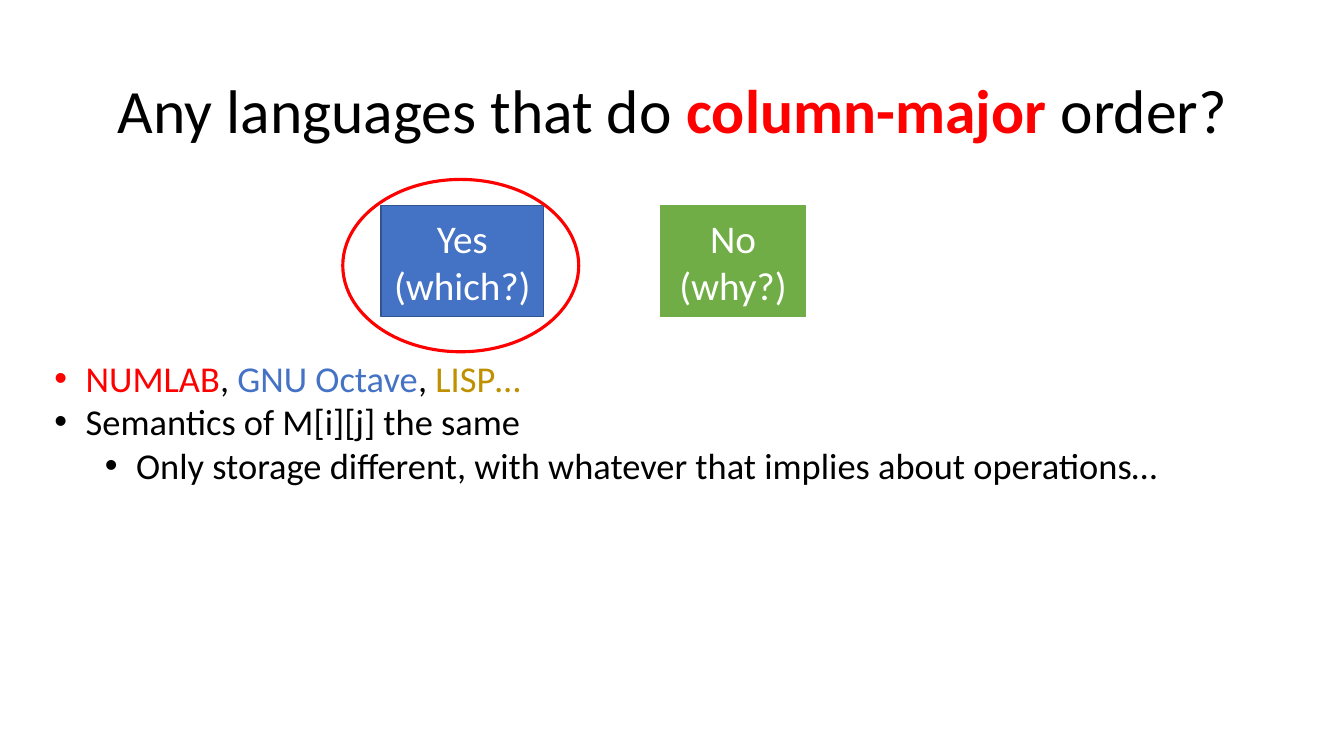
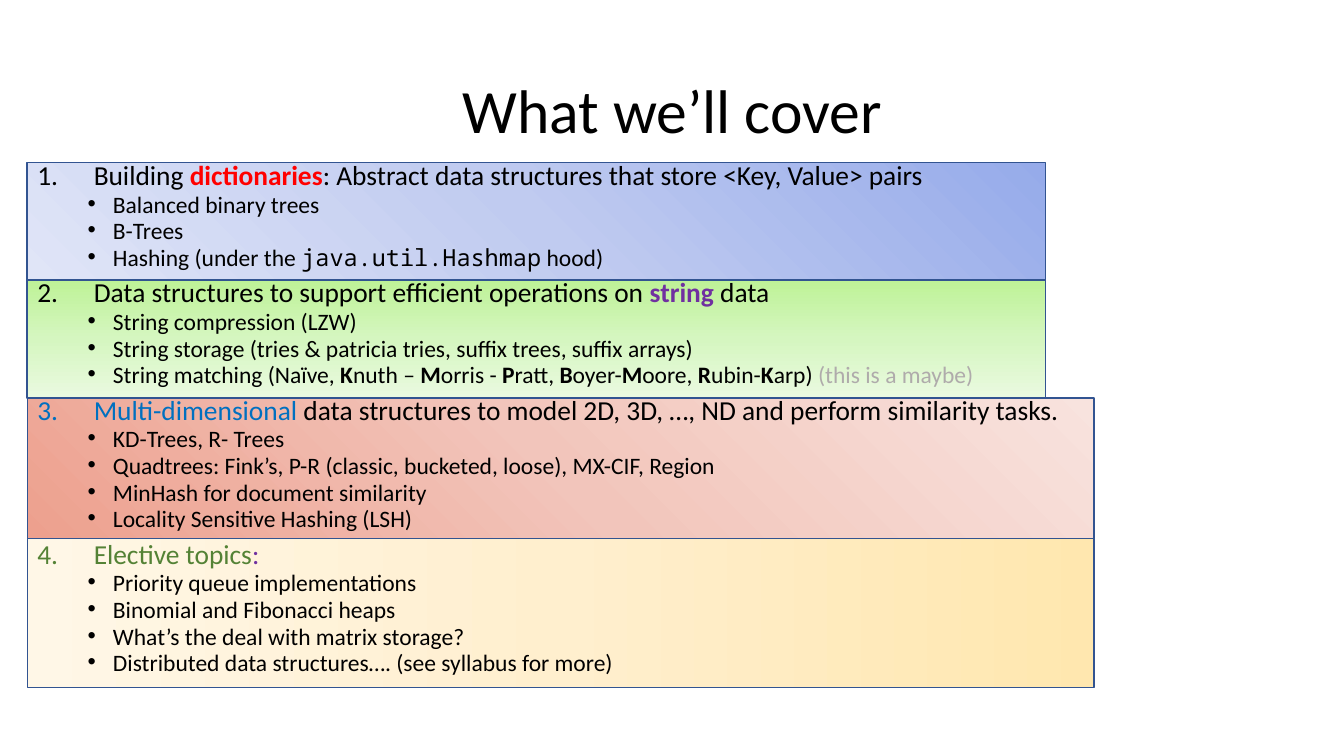
from copy import deepcopy

from lxml import etree
from pptx import Presentation
from pptx.dml.color import RGBColor
from pptx.enum.shapes import MSO_SHAPE
from pptx.enum.text import MSO_ANCHOR, MSO_AUTO_SIZE, PP_ALIGN
from pptx.oxml.ns import qn
from pptx.util import Inches, Pt

RECTANGLE, OVAL = MSO_SHAPE.RECTANGLE, MSO_SHAPE.OVAL
MIDDLE, TOP = MSO_ANCHOR.MIDDLE, MSO_ANCHOR.TOP
CENTER, LEFT = PP_ALIGN.CENTER, PP_ALIGN.LEFT
NO_AUTOFIT = MSO_AUTO_SIZE.NONE
TITLE_ONLY, TITLE_AND_CONTENT = 5, 1

COLORS = {
    "black": "000000", "white": "FFFFFF", "red": "FF0000", "blue": "4472C4",
    "outline": "325491", "green": "70AD47", "gold": "BF9000",
    "purple": "7030A0", "sky": "0070C0", "moss": "548235", "gray": "AFABAB",
}
FONT, CODE_FONT = "Calibri", "Noto Sans Mono"
TITLE_BOX = (0.92, 0.4, 11.5, 1.45)
NUMBER = ("a:buAutoNum", {"type": "arabicPeriod"})
BULLET = ("a:buChar", {"char": "•"})
BOLD = {"bold": True}

# Per list level: text size, left indent, hanging indent, spacing, bullet
ANSWER_LEVELS = [
    {"size": 26, "left": 0.31, "hang": 0.31, "line": 1.0, "before": 0, "mark": BULLET},
    {"size": 26, "left": 0.81, "hang": 0.31, "line": 1.0, "before": 0, "mark": BULLET},
]
TOPIC_LEVELS = [
    {"size": 19.6, "left": 0.56, "hang": 0.56, "line": 0.7, "before": 10, "mark": NUMBER},
    {"size": 16.8, "left": 0.75, "hang": 0.25, "line": 0.7, "before": 5, "mark": BULLET},
]

ANSWERS = [
    (0, [("NUMLAB", {"color": "red"}), ", ", ("GNU Octave", {"color": "blue"}),
         ", ", ("LISP…", {"color": "gold"})]),
    (0, ["Semantics of M[i][j] the same"]),
    (1, ["Only storage different, with whatever that implies about operations…"]),
]

# Each topic: band width, band height, gradient angle, gradient, heading, items
TOPICS = [
    {"width": 10.1, "height": 1.17, "angle": 225,
     "gradient": ["96ABEA", "C0CBF0", "E0E5F7"],
     "heading": ["Building ", ("dictionaries", {"color": "red", "bold": True}),
                 ": Abstract data structures that store <Key, Value> pairs"],
     "items": [["Balanced binary trees"], ["B-Trees"],
               ["Hashing (under the ", ("java.util.Hashmap", {"name": CODE_FONT}),
                " hood)"]]},
    {"width": 10.1, "height": 1.17, "angle": 270,
     "gradient": ["BEF297", "D5F6C0", "EAFAE0"],
     "heading": ["Data structures to support efficient operations on ",
                 ("string", {"color": "purple", "bold": True}), " data"],
     "items": [["String compression (LZW)"],
               ["String storage (tries & patricia tries, suffix trees, suffix arrays)"],
               ["String matching (Naïve, ", ("K", BOLD), "nuth – ", ("M", BOLD),
                "orris - ", ("P", BOLD), "ratt, ", ("B", BOLD), "oyer-", ("M", BOLD),
                "oore, ", ("R", BOLD), "ubin-", ("K", BOLD), "arp) ",
                ("(this is a maybe)", {"color": "gray"})]]},
    {"width": 10.58, "height": 1.39, "angle": 45,
     "gradient": ["EDA08E", "F2C5BB", "F8E3DE"],
     "heading": [("Multi-dimensional", {"color": "sky"}),
                 " data structures to model 2D, 3D, …, ND and perform similarity tasks."],
     "items": [["KD-Trees, R- Trees"],
               ["Quadtrees: Fink’s, P-R (classic, bucketed, loose), MX-CIF, Region"],
               ["MinHash for document similarity"],
               ["Locality Sensitive Hashing (LSH)"]]},
    {"width": 10.58, "height": 1.48, "angle": 180,
     "gradient": ["FFE7AF", "FFEFCE", "FFF7E7"],
     "heading": [("Elective topics", {"color": "moss"}), (":", {"color": "purple"})],
     "items": [["Priority queue implementations"], ["Binomial and Fibonacci heaps"],
               ["What’s the deal with matrix storage?"],
               ["Distributed data structures…. (see syllabus for more)"]]},
]


def rgb(name):
    return RGBColor.from_string(COLORS[name])


def place(shape, box):
    for side, length in zip(("left", "top", "width", "height"), box):
        setattr(shape, side, Inches(length))


def add_runs(paragraph, parts, size, color="black"):
    """Parts are plain strings or (text, format) pairs."""
    for part in parts:
        text, changes = (part, {}) if isinstance(part, str) else part
        run = paragraph.add_run()
        run.text = text
        values = {"name": FONT, "size": Pt(size), "bold": False, "color": color, **changes}
        run.font.color.rgb = rgb(values.pop("color"))
        for attribute, value in values.items():
            setattr(run.font, attribute, value)


def add_title(slide, parts):
    title = slide.shapes.title
    place(title, TITLE_BOX)
    frame = title.text_frame
    frame.vertical_anchor, frame.auto_size = MIDDLE, NO_AUTOFIT
    heading = frame.paragraphs[0]
    heading.alignment, heading.line_spacing = CENTER, 0.9
    add_runs(heading, parts, 44)


def fill_list(body, box, entries, levels):
    place(body, box)
    frame = body.text_frame
    frame.vertical_anchor, frame.auto_size = TOP, NO_AUTOFIT
    for index, (level, parts) in enumerate(entries):
        paragraph = frame.add_paragraph() if index else frame.paragraphs[0]
        style = levels[level]
        formats = {"level": level, "alignment": LEFT, "line_spacing": style["line"],
                   "space_before": Pt(style["before"]), "space_after": Pt(0)}
        for attribute, value in formats.items():
            setattr(paragraph, attribute, value)
        properties = paragraph._p.get_or_add_pPr()
        properties.set("marL", str(Inches(style["left"])))
        properties.set("indent", str(-Inches(style["hang"])))
        tag, settings = style["mark"]
        etree.SubElement(properties, qn(tag), settings)
        add_runs(paragraph, parts, style["size"])


def add_outlined(slide, preset, box, line_color, line_width=1):
    shape = slide.shapes.add_shape(preset, *map(Inches, box))
    shape.shadow.inherit = False
    shape.line.color.rgb = rgb(line_color)
    shape.line.width = Pt(line_width)
    return shape


def add_choice(slide, box, lines, fill, outline):
    choice = add_outlined(slide, RECTANGLE, box, outline)
    choice.fill.solid()
    choice.fill.fore_color.rgb = rgb(fill)
    frame = choice.text_frame
    frame.word_wrap, frame.vertical_anchor = True, MIDDLE
    for index, line in enumerate(lines):
        paragraph = frame.add_paragraph() if index else frame.paragraphs[0]
        paragraph.alignment = CENTER
        add_runs(paragraph, [line], 28, "white")


def add_vote(slide, box):
    """Two answer boxes, with a ring around the right one."""
    left, top, width, height = box
    no_width = 1.44
    add_choice(slide, (left, top, 1.61, height), ["Yes", "(which?)"], "blue", "outline")
    add_choice(slide, (left + width - no_width, top, no_width, height),
               ["No", "(why?)"], "green", "green")
    ring = add_outlined(slide, OVAL, (left - 0.38, top - 0.26, 2.34, 1.71), "red", 2.25)
    ring.fill.background()


def fill_gradient(shape, hexes, angle):
    """Spread three colours evenly; the angle runs counterclockwise."""
    fill = shape.fill
    fill.gradient()
    fill.gradient_angle = angle
    stop_list = shape.element.spPr.find(".//" + qn("a:gsLst"))
    stop_list.insert(1, deepcopy(stop_list[0]))
    for index, (stop, color) in enumerate(zip(fill.gradient_stops, hexes)):
        stop.position = index / 2
        stop.color.rgb = RGBColor.from_string(color)


def add_topics(slide, box):
    left, top = box[:2]
    entries = []
    for topic in TOPICS:
        band = add_outlined(slide, RECTANGLE, (left, top, topic["width"], topic["height"]),
                            "outline")
        fill_gradient(band, topic["gradient"], topic["angle"])
        top += topic["height"]
        entries.append((0, topic["heading"]))
        entries += [(1, item) for item in topic["items"]]
    body = slide.placeholders[1]
    fill_list(body, box, entries, TOPIC_LEVELS)
    body.element.getparent().append(body.element)  # text in front of the bands


def build_column_major(deck):
    slide = deck.slides.add_slide(deck.slide_layouts[TITLE_AND_CONTENT])
    add_title(slide, ["Any languages that do ",
                      ("column-major", {"color": "red", "bold": True}), " order?"])
    add_vote(slide, (3.78, 2.04, 4.21, 1.1))
    fill_list(slide.placeholders[1], (0.44, 3.48, 12.31, 1.85), ANSWERS, ANSWER_LEVELS)


def build_coverage(deck):
    slide = deck.slides.add_slide(deck.slide_layouts[TITLE_AND_CONTENT])
    add_title(slide, ["What we’ll cover"])
    add_topics(slide, (0.27, 1.61, 12.7, 5.75))


def main():
    deck = Presentation()
    deck.slide_width, deck.slide_height = Inches(13.33), Inches(7.5)
    build_column_major(deck)
    build_coverage(deck)
    deck.save("out.pptx")


if __name__ == "__main__":
    main()
